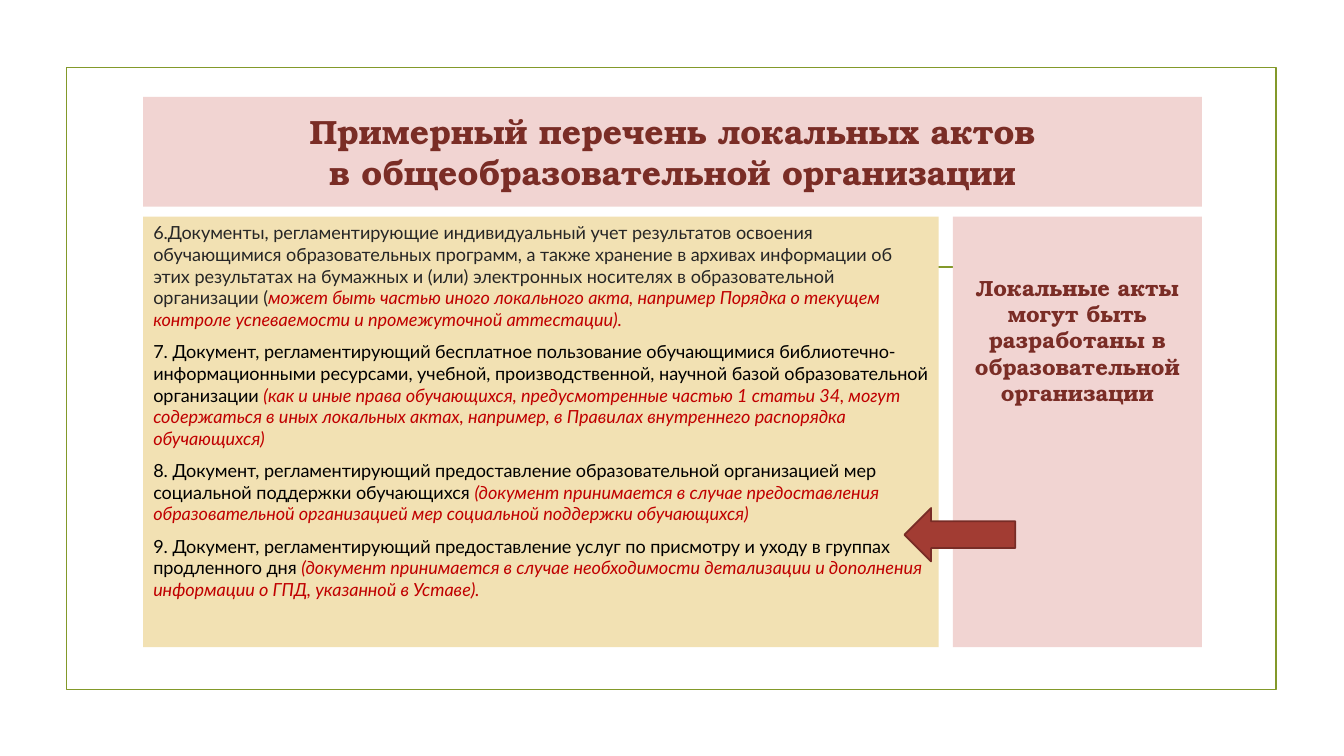
from lxml import etree
from pptx import Presentation
from pptx.dml.color import RGBColor
from pptx.enum.shapes import MSO_CONNECTOR, MSO_SHAPE
from pptx.enum.text import MSO_ANCHOR, MSO_AUTO_SIZE, PP_ALIGN
from pptx.oxml.ns import qn
from pptx.util import Inches, Pt

RECT, LEFT_ARROW = MSO_SHAPE.RECTANGLE, MSO_SHAPE.LEFT_ARROW
STRAIGHT = MSO_CONNECTOR.STRAIGHT
CENTER, LEFT = PP_ALIGN.CENTER, PP_ALIGN.LEFT
TOP, MIDDLE = MSO_ANCHOR.TOP, MSO_ANCHOR.MIDDLE
NO_FIT = MSO_AUTO_SIZE.NONE

COLORS = {
    "olive": "83992A", "pink": "F1D4D2", "sand": "F2E1B3", "maroon": "7A2D26",
    "dark": "262626", "black": "000000", "red": "C00000",
    "arrow": "A23C33", "arrow_line": "782C26",
}
SANS, SERIF = "Lato", "TeX Gyre Bonum"

TITLE = "Примерный перечень локальных актов\nв общеобразовательной организации"
SIDE_NOTE = "Локальные акты могут быть разработаны в образовательной организации"
ACTS = [
    ("6.Документы, регламентирующие индивидуальный учет результатов освоения обучающимися "
     "образовательных программ, а также хранение в архивах информации об этих результатах "
     "на бумажных и (или) электронных носителях в образовательной организации (",
     "может быть частью иного локального акта, например Порядка о текущем контроле "
     "успеваемости и промежуточной аттестации).", "dark"),
    ("7. Документ, регламентирующий бесплатное пользование обучающимися "
     "библиотечно-информационными ресурсами, учебной, производственной, научной базой "
     "образовательной организации ",
     "(как и иные права обучающихся, предусмотренные частью 1 статьи 34, могут содержаться "
     "в иных локальных актах, например, в Правилах внутреннего распорядка обучающихся)",
     "black"),
    ("8. Документ, регламентирующий предоставление образовательной организацией мер "
     "социальной поддержки обучающихся ",
     "(документ принимается в случае предоставления образовательной организацией мер "
     "социальной поддержки обучающихся)", "black"),
    ("9. Документ, регламентирующий предоставление услуг по присмотру и уходу в группах "
     "продленного дня ",
     "(документ принимается в случае необходимости детализации и дополнения информации "
     "о ГПД, указанной в Уставе).", "black"),
]


def rgb(name):
    """Return the named colour."""
    return RGBColor.from_string(COLORS[name])


def add_text(p, text, size, color, font=SANS, bold=False, italic=False):
    """Add formatted text to a paragraph, breaking lines at newlines."""
    for i, line in enumerate(text.split("\n")):
        if i:
            p.add_line_break()
        r = p.add_run()
        r.text = line
        r.font.size, r.font.name = Pt(size), font
        r.font.bold, r.font.italic = bold, italic
        r.font.color.rgb = rgb(color)


def format_paragraph(p, align, before=0, after=0):
    """Remove the bullet and indent and set alignment and spacing."""
    pPr = p._p.get_or_add_pPr()
    pPr.set("marL", "0")
    pPr.set("indent", "0")
    etree.SubElement(pPr, qn("a:buNone"))
    p.alignment = align
    p.space_before, p.space_after = Pt(before), Pt(after)


def place_panel(sp, box, fill, anchor=TOP, top=0.05):
    """Move and fill a placeholder and return its text frame."""
    sp.left, sp.top, sp.width, sp.height = map(Inches, box)
    sp.fill.solid()
    sp.fill.fore_color.rgb = rgb(fill)
    tf = sp.text_frame
    tf.word_wrap, tf.auto_size = True, NO_FIT
    tf.vertical_anchor, tf.margin_top = anchor, Inches(top)
    return tf


def add_frame(slide, box):
    """Draw the border and the rule behind all panels."""
    x, y, w, h = box
    sp = slide.shapes.add_shape(RECT, *map(Inches, box))
    sp.shadow.inherit = False
    sp.fill.background()
    rule = slide.shapes.add_connector(
        STRAIGHT, *map(Inches, (x + 0.87, y + 1.98, x + w - 0.85, y + 1.98)))
    etree.SubElement(rule._element.spPr, qn("a:effectLst"))
    for s in (rule, sp):
        s.line.color.rgb, s.line.width = rgb("olive"), Pt(1.25)
        slide.shapes._spTree.insert(2, s._element)


def add_title(sp, box):
    """Fill the title band."""
    p = place_panel(sp, box, "pink", MIDDLE).paragraphs[0]
    format_paragraph(p, CENTER)
    add_text(p, TITLE, 24, "maroon", SERIF, bold=True)


def add_acts(sp, box):
    """Fill the list of local acts with their remarks."""
    tf = place_panel(sp, box, "sand")
    for i, (act, remark, color) in enumerate(ACTS):
        p = tf.add_paragraph() if i else tf.paragraphs[0]
        format_paragraph(p, LEFT, before=1.5 if i else 0, after=6)
        add_text(p, act, 12.9, color)
        add_text(p, remark, 12.9, "red", italic=True)


def add_side_note(slide, sp, box):
    """Fill the side panel and point its arrow at the list."""
    x, y, w, h = box
    p = place_panel(sp, box, "pink", top=0.57).paragraphs[0]
    format_paragraph(p, CENTER)
    add_text(p, SIDE_NOTE, 15.7, "maroon", SERIF, bold=True)
    arrow = slide.shapes.add_shape(
        LEFT_ARROW, *map(Inches, (x - 0.48, y + 2.89, 1.1, 0.53)))
    arrow.shadow.inherit = False
    arrow.fill.solid()
    arrow.fill.fore_color.rgb = rgb("arrow")
    arrow.line.color.rgb, arrow.line.width = rgb("arrow_line"), Pt(1.25)


def main():
    """Build and save the slide."""
    prs = Presentation()
    prs.slide_width, prs.slide_height = Inches(13.33), Inches(7.5)
    slide = prs.slides.add_slide(prs.slide_layouts[3])
    title, acts, note = slide.placeholders
    add_frame(slide, (0.66, 0.67, 12, 6.17))
    add_title(title, (1.42, 0.96, 10.5, 1.09))
    add_acts(acts, (1.42, 2.15, 7.89, 4.27))
    add_side_note(slide, note, (9.45, 2.15, 2.47, 4.27))
    prs.save("out.pptx")


if __name__ == "__main__":
    main()
